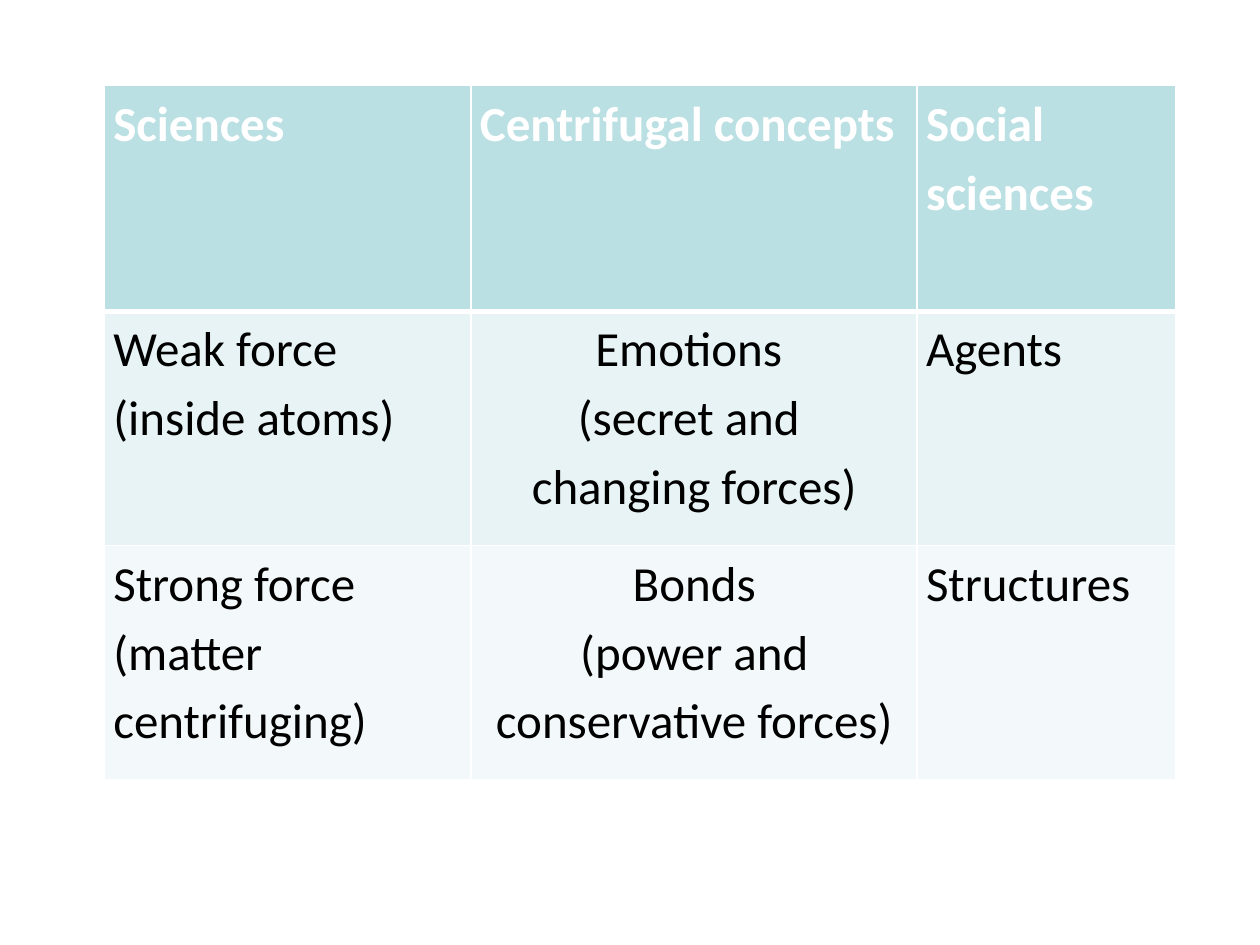
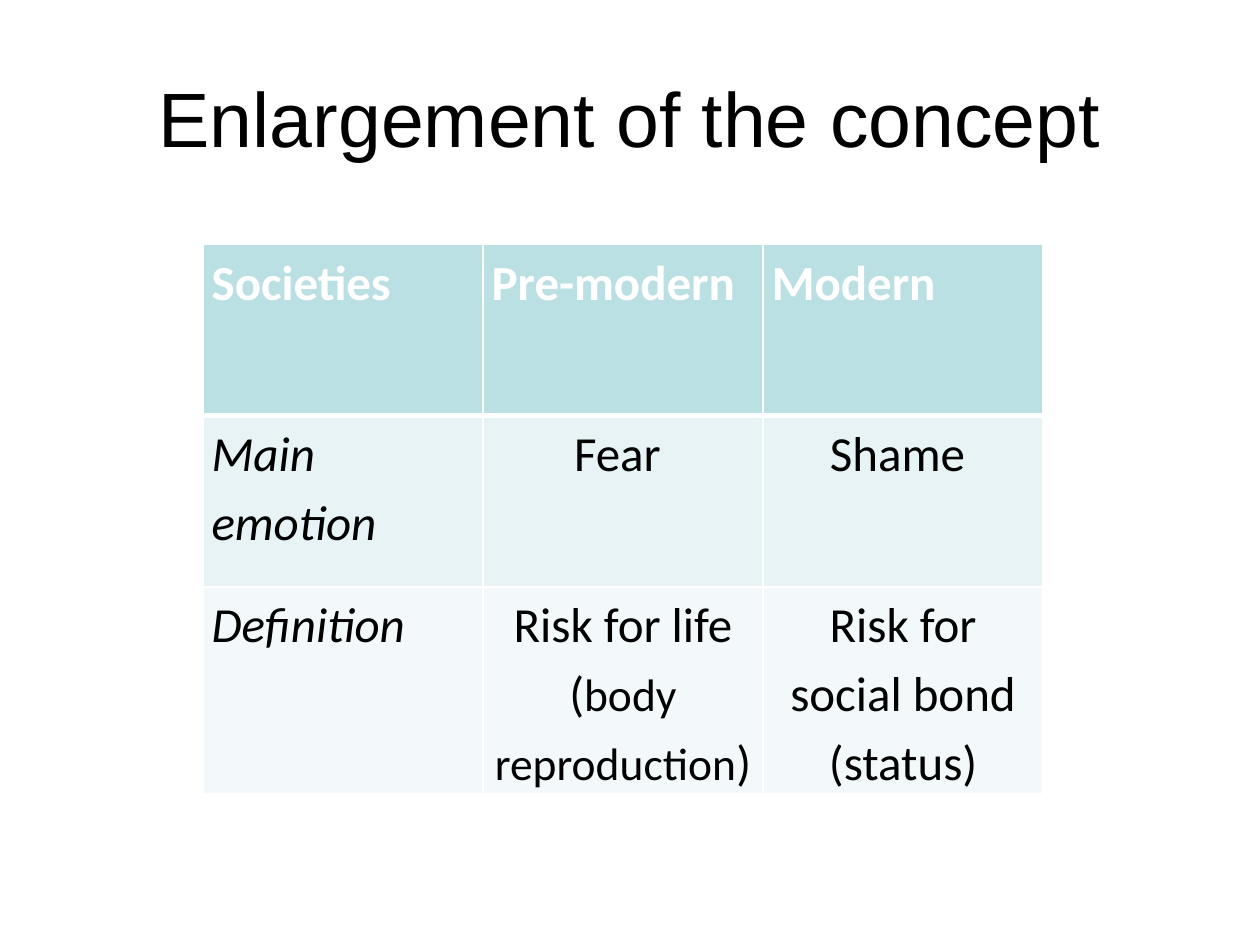
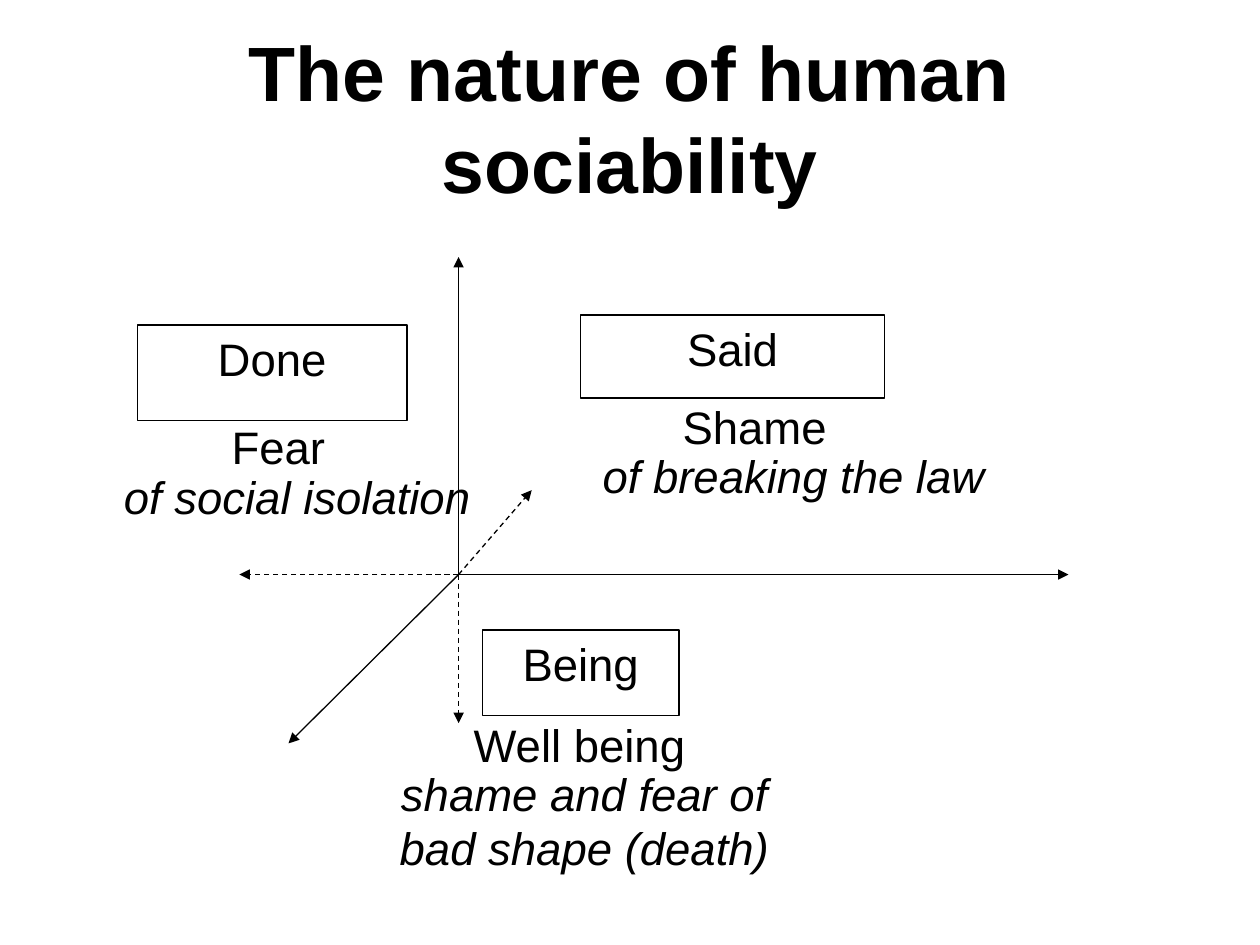
"""Builds three slides on emotions, bonds and human sociability."""
from dataclasses import dataclass
from typing import NamedTuple

import pptx
import pptx.dml.color
import pptx.enum.dml
import pptx.enum.shapes
import pptx.enum.text
import pptx.oxml
import pptx.oxml.ns
import pptx.util

ALIGN = pptx.enum.text.PP_ALIGN
ANCHOR = pptx.enum.text.MSO_ANCHOR
WIDTH, HEIGHT = pptx.util.Inches(10), pptx.util.Inches(7.5)
TITLE_ONLY, BLANK = 5, 6
BLACK, WHITE = "000000", "FFFFFF"
HEADER_FILL = "BBE0E3"
BODY_FILLS = ("E7F3F4", "F3F9FA")
TITLE_SIZE, TABLE_SIZE, SMALL_SIZE, LABEL_SIZE = 44, 28, 26, 26


class Area(NamedTuple):
    """Left, top, width and height in percent of the slide."""
    left: float
    top: float
    width: float
    height: float

    def emu(self) -> tuple[int, int, int, int]:
        return x(self.left), y(self.top), x(self.width), y(self.height)


class Point(NamedTuple):
    """A place in percent of the slide."""
    left: float
    top: float


@dataclass
class Cell:
    """Lines are paragraphs; text between bars is set smaller."""
    text: str
    centred: bool = False
    italic: bool = False


@dataclass
class Axis:
    end: Point
    dashed: bool = False


@dataclass
class Label:
    text: str
    area: Area
    italic: bool = False


TITLE_AREA = Area(5, 4, 90, 16.67)

FORCES = [
    [Cell("Sciences"), Cell("Centrifugal concepts"), Cell("Social sciences")],
    [Cell("Weak force (inside atoms)"),
     Cell("Emotions \n(secret and \nchanging forces)", centred=True),
     Cell("Agents")],
    [Cell("Strong force (matter centrifuging)"),
     Cell("Bonds\n(power and conservative forces)", centred=True),
     Cell("Structures")],
]
SOCIETIES = [
    [Cell("Societies"), Cell("Pre-modern"), Cell("Modern")],
    [Cell("Main emotion", italic=True), Cell("Fear ", centred=True),
     Cell("Shame ", centred=True)],
    [Cell("Definition", italic=True),
     Cell("Risk for life (|body reproduction|)", centred=True),
     Cell("Risk for social bond (status)", centred=True)],
]

ORIGIN = Point(36.4, 60.8)
AXES = [
    Axis(Point(ORIGIN.left, 27.2)),
    Axis(Point(22.9, 78.67)),
    Axis(Point(84.8, ORIGIN.top)),
    Axis(Point(ORIGIN.left, 76.53), dashed=True),
    Axis(Point(19, ORIGIN.top), dashed=True),
    Axis(Point(42.2, 51.87), dashed=True),
]
DOMAINS = [
    Label("Done", Area(10.9, 34.4, 21.4, 10.13)),
    Label("Said", Area(46.1, 33.33, 24.1, 8.8)),
    Label("Being", Area(38.3, 66.67, 15.6, 9.07)),
]
EMOTION_SIZE = (21.4, 10.13)
REASON_SIZE = (35.4, 10.13)
LABELS = [
    Label("Well being ", Area(35.8, 75.2, *EMOTION_SIZE)),
    Label("Fear", Area(11.4, 43.73, *EMOTION_SIZE)),
    Label("Shame", Area(49.2, 41.6, *EMOTION_SIZE)),
    Label("of breaking the law", Area(45.3, 46.8, *REASON_SIZE), italic=True),
    Label("of social isolation", Area(5.9, 48.93, *REASON_SIZE), italic=True),
    Label("shame and fear of bad shape (death)",
          Area(28.7, 80.4, *REASON_SIZE), italic=True),
]


def x(percent: float) -> int:
    return round(WIDTH * percent / 100)


def y(percent: float) -> int:
    return round(HEIGHT * percent / 100)


def rgb(colour: str) -> pptx.dml.color.RGBColor:
    return pptx.dml.color.RGBColor.from_string(colour)


def format_font(font, size: float, name: str = "Arial", colour: str = BLACK,
                bold: bool = False, italic: bool = False) -> None:
    font.name, font.size = name, pptx.util.Pt(size)
    font.bold, font.italic = bold, italic
    font.color.rgb = rgb(colour)


def add_title(s, text: str, bold: bool = False) -> None:
    title = s.shapes.title
    title.left, title.top, title.width, title.height = TITLE_AREA.emu()
    tf = title.text_frame
    tf.text = text
    tf.word_wrap = True
    tf.auto_size = pptx.enum.text.MSO_AUTO_SIZE.NONE
    tf.vertical_anchor = ANCHOR.MIDDLE
    p = tf.paragraphs[0]
    p.alignment = ALIGN.CENTER
    format_font(p.runs[0].font, TITLE_SIZE, bold=bold)


def add_borders(cell, top: float, bottom: float) -> None:
    """Give a cell white borders; top and bottom widths are in points."""
    properties = cell._tc.get_or_add_tcPr()
    for side, width in (("L", 1), ("R", 1), ("T", top), ("B", bottom)):
        properties.append(pptx.oxml.parse_xml(
            f'<a:ln{side} {pptx.oxml.ns.nsdecls("a")} w="{pptx.util.Pt(width)}">'
            f'<a:solidFill><a:srgbClr val="{WHITE}"/></a:solidFill></a:ln{side}>'))


def fill_cell(cell, content: Cell, row: int) -> None:
    header = row == 0
    cell.margin_left = cell.margin_right = pptx.util.Inches(0.07)
    cell.margin_top = cell.margin_bottom = 0
    add_borders(cell, top=3 if row == 1 else 1, bottom=3 if header else 1)
    cell.fill.solid()
    cell.fill.fore_color.rgb = rgb(HEADER_FILL if header else BODY_FILLS[row - 1])
    tf = cell.text_frame
    tf.text = content.text.replace("|", "")
    for p, line in zip(tf.paragraphs, content.text.split("\n")):
        p.line_spacing = 1.15
        p.alignment = ALIGN.CENTER if content.centred else ALIGN.LEFT
        parts = line.split("|")
        p.runs[0].text = parts[0]
        for part in parts[1:]:
            p.add_run().text = part
        for i, r in enumerate(p.runs):
            format_font(r.font, SMALL_SIZE if i % 2 else TABLE_SIZE, "Calibri",
                        WHITE if header else BLACK, header, content.italic)


def add_table(s, rows: list[list[Cell]], corner: Point,
              widths: list[float], heights: list[float]) -> None:
    area = Area(*corner, sum(widths), sum(heights))
    table = s.shapes.add_table(len(rows), len(widths), *area.emu()).table
    for column, width in zip(table.columns, widths):
        column.width = x(width)
    for i, (row, height) in enumerate(zip(rows, heights)):
        table.rows[i].height = y(height)
        for j, content in enumerate(row):
            fill_cell(table.cell(i, j), content, i)


def add_axis(s, axis: Axis) -> None:
    """Draw an arrow from the origin to the end of the axis."""
    line = s.shapes.add_connector(
        pptx.enum.shapes.MSO_CONNECTOR.STRAIGHT,
        x(ORIGIN.left), y(ORIGIN.top), x(axis.end.left), y(axis.end.top))
    line.line.color.rgb = rgb(BLACK)
    line.line.width = pptx.util.Pt(0.75)
    if axis.dashed:
        line.line.dash_style = pptx.enum.dml.MSO_LINE.DASH
    namespace = pptx.oxml.ns.nsdecls("a")
    line.line._get_or_add_ln().append(
        pptx.oxml.parse_xml(f'<a:tailEnd {namespace} type="triangle"/>'))
    line._element.spPr.append(pptx.oxml.parse_xml(f"<a:effectLst {namespace}/>"))


def write_label(sp, label: Label) -> None:
    tf = sp.text_frame
    tf.text = label.text
    tf.word_wrap = True
    tf.vertical_anchor = ANCHOR.TOP
    p = tf.paragraphs[0]
    p.alignment = ALIGN.CENTER
    format_font(p.runs[0].font, LABEL_SIZE, italic=label.italic)


def add_domain(s, label: Label) -> None:
    sp = s.shapes.add_shape(pptx.enum.shapes.MSO_SHAPE.RECTANGLE, *label.area.emu())
    sp.shadow.inherit = False
    sp.fill.background()
    sp.line.color.rgb = rgb(BLACK)
    sp.line.width = pptx.util.Pt(0.75)
    write_label(sp, label)


def main() -> None:
    prs = pptx.Presentation()
    prs.slide_width, prs.slide_height = WIDTH, HEIGHT

    s = prs.slides.add_slide(prs.slide_layouts[BLANK])
    add_table(s, FORCES, Point(8.3, 9.07), [29.1, 35.4, 20.5], [23.87, 24.8, 24.8])

    s = prs.slides.add_slide(prs.slide_layouts[TITLE_ONLY])
    add_title(s, "Enlargement of the concept")
    add_table(s, SOCIETIES, Point(16.1, 25.87), [22.23] * 3, [18.13] * 3)

    s = prs.slides.add_slide(prs.slide_layouts[TITLE_ONLY])
    add_title(s, "The nature of human sociability", bold=True)
    for axis in AXES:
        add_axis(s, axis)
    for domain in DOMAINS:
        add_domain(s, domain)
    for label in LABELS:
        write_label(s.shapes.add_textbox(*label.area.emu()), label)

    prs.save("out.pptx")


if __name__ == "__main__":
    main()
